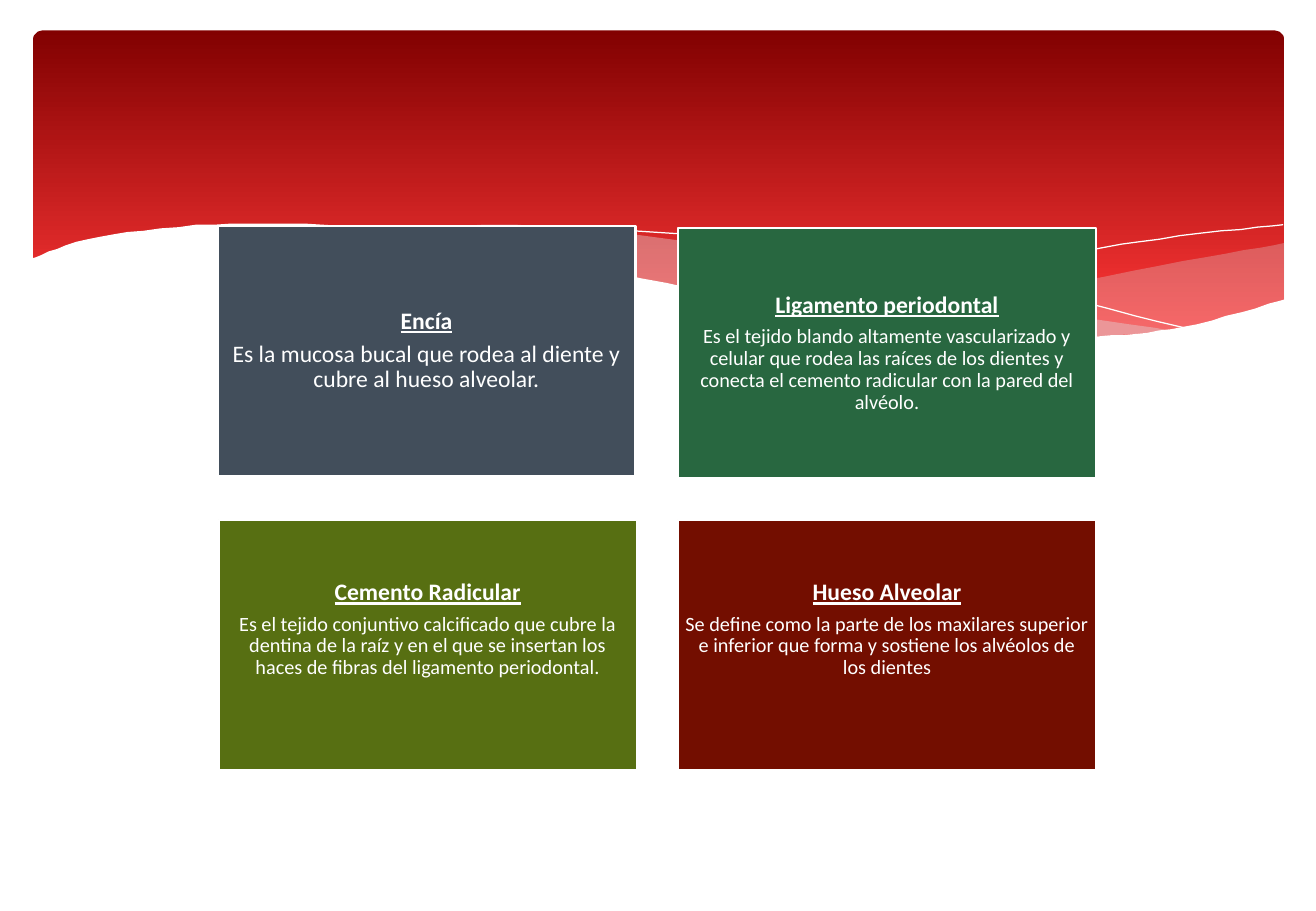
from dataclasses import dataclass

from lxml.etree import SubElement
from pptx import Presentation
from pptx.dml.color import RGBColor
from pptx.enum.shapes import MSO_SHAPE as Shape
from pptx.enum.text import MSO_ANCHOR as Anchor, PP_ALIGN as Align
from pptx.oxml.ns import qn
from pptx.shapes.autoshape import Shape as AutoShape
from pptx.slide import Slide
from pptx.util import Emu, Pt

PX = 9144  # EMU per px, 100 px to the inch
Points = list[tuple[float, float]]


@dataclass(frozen=True)
class Theme:
    font: str = "Calibri"
    white: str = "FFFFFF"
    mist: str = "DEDEE0"
    banner_top: str = "820101"
    banner_bottom: str = "FE3737"
    slate: str = "424E5B"
    green: str = "286740"
    olive: str = "576F12"
    maroon: str = "730E00"
    heading_size: int = 14
    body_size: int = 12
    space_after: float = 4.5
    line_spacing: float = 0.9
    border: float = 1.25


THEME = Theme()


@dataclass(frozen=True)
class Card:
    left: int
    top: int
    color: str
    heading: str
    body: str
    body_size: int = THEME.body_size
    bottom_inset: int = 6


@dataclass(frozen=True)
class Wave:
    """Smooth edges that meet at corners; without a fill, an open line."""
    edges: list[Points]
    fill: str | None = None
    opacity: int = 100


CARD_WIDTH, CARD_HEIGHT, INSET = 344, 206, 6
RAISED_INSET = 31  # lifts the text of the lower cards
CURVE_STEPS = 8

CARDS = [
    Card(179, 186, THEME.slate, "Encía",
         "Es la mucosa bucal que rodea al diente y cubre al hueso alveolar.",
         body_size=THEME.heading_size),
    Card(558, 188, THEME.green, "Ligamento periodontal",
         "Es el tejido blando altamente vascularizado y celular que rodea las raíces "
         "de los dientes y conecta el cemento radicular con la pared del alvéolo."),
    Card(180, 428, THEME.olive, "Cemento Radicular",
         "Es el tejido conjuntivo calcificado que cubre la dentina de la raíz y en el "
         "que se insertan los haces de fibras del ligamento periodontal.",
         bottom_inset=RAISED_INSET),
    Card(558, 428, THEME.maroon, "Hueso Alveolar",
         "Se define como la parte de los maxilares superior e inferior que forma y "
         "sostiene los alvéolos de los dientes", bottom_inset=RAISED_INSET),
]

WAVES = [
    Wave([[(1057, 200), (932, 223), (716, 265)],
          [(716, 265), (807, 275), (904, 277), (989, 267), (1057, 247)]],
         THEME.mist, 29),
    Wave([[(967, 273), (765, 240), (648, 214), (529, 194), (411, 185), (310, 191)],
          [(310, 191), (487, 222), (614, 248), (721, 266), (855, 278), (967, 273)]],
         THEME.mist, 40),
    Wave([[(335, 195), (435, 187), (552, 192), (689, 208), (824, 233), (983, 272)]]),
    Wave([[(665, 257), (810, 223), (938, 199), (1056, 185)]]),
    Wave([[(25, 213), (82, 195), (191, 184), (317, 190), (484, 220), (653, 254),
           (787, 272), (892, 277), (974, 269), (1059, 246)],
          [(1059, 329), (25, 329)]],
         THEME.white),
]


def px(length: int) -> Emu:
    return Emu(length * PX)


def rgb(color: str) -> RGBColor:
    return RGBColor.from_string(color)


def smooth(anchors: Points) -> Points:
    """Sample a Catmull-Rom curve through the anchors."""
    padded = [anchors[0], *anchors, anchors[-1]]
    points = [anchors[0]]
    for span in zip(padded, padded[1:], padded[2:], padded[3:]):
        for step in range(1, CURVE_STEPS + 1):
            t = step / CURVE_STEPS
            x, y = (
                b + t * (c - a) / 2
                + t**2 * (2 * a - 5 * b + 4 * c - d) / 2
                + t**3 * (3 * b - a - 3 * c + d) / 2
                for a, b, c, d in zip(*span))
            points.append((x, y))
    return points


def add_banner(slide: Slide) -> None:
    banner = slide.shapes.add_shape(
        Shape.ROUNDED_RECTANGLE, px(27), px(25), px(1030), px(270))
    banner.adjustments[0] = 0.03
    banner.shadow.inherit = False
    banner.line.fill.background()
    banner.fill.gradient()
    banner.fill.gradient_angle = 270
    stops = zip(banner.fill.gradient_stops,
                (THEME.banner_top, THEME.banner_bottom), (0, 0.9))
    for stop, color, position in stops:
        stop.color.rgb = rgb(color)
        stop.position = position


def set_opacity(shape: AutoShape, percent: int) -> None:
    color = shape._element.spPr.find(qn("a:solidFill"))[0]
    SubElement(color, qn("a:alpha"), val=str(percent * 1000))


def add_wave(slide: Slide, wave: Wave) -> None:
    start, *rest = [point for edge in wave.edges for point in smooth(edge)]
    builder = slide.shapes.build_freeform(*start, scale=PX)
    builder.add_line_segments(rest, close=wave.fill is not None)
    shape = builder.convert_to_shape()
    shape.shadow.inherit = False
    if wave.fill is None:
        shape.fill.background()
        shape.line.color.rgb = rgb(THEME.white)
        shape.line.width = Pt(0)
        return
    shape.line.fill.background()
    shape.fill.solid()
    shape.fill.fore_color.rgb = rgb(wave.fill)
    if wave.opacity < 100:
        set_opacity(shape, wave.opacity)


def add_card(slide: Slide, card: Card) -> None:
    shape = slide.shapes.add_shape(
        Shape.RECTANGLE, px(card.left), px(card.top), px(CARD_WIDTH), px(CARD_HEIGHT))
    shape.shadow.inherit = False
    shape.fill.solid()
    shape.fill.fore_color.rgb = rgb(card.color)
    shape.line.color.rgb = rgb(THEME.white)
    shape.line.width = Pt(THEME.border)

    frame = shape.text_frame
    frame.word_wrap = True
    frame.vertical_anchor = Anchor.MIDDLE
    frame.margin_left = frame.margin_right = frame.margin_top = px(INSET)
    frame.margin_bottom = px(card.bottom_inset)
    frame.text = f"{card.heading}\n{card.body}"
    heading, body = frame.paragraphs
    for paragraph, size in ((heading, THEME.heading_size), (body, card.body_size)):
        paragraph.alignment = Align.CENTER
        paragraph.line_spacing = THEME.line_spacing
        paragraph.font.name = THEME.font
        paragraph.font.size = Pt(size)
        paragraph.font.color.rgb = rgb(THEME.white)
    heading.space_after = Pt(THEME.space_after)
    heading.font.bold = True
    heading.font.underline = True


def main() -> None:
    presentation = Presentation()
    presentation.slide_width, presentation.slide_height = px(1083), px(750)
    slide = presentation.slides.add_slide(presentation.slide_layouts[6])
    add_banner(slide)
    for wave in WAVES:
        add_wave(slide, wave)
    for card in CARDS:
        add_card(slide, card)
    presentation.save("out.pptx")


if __name__ == "__main__":
    main()
